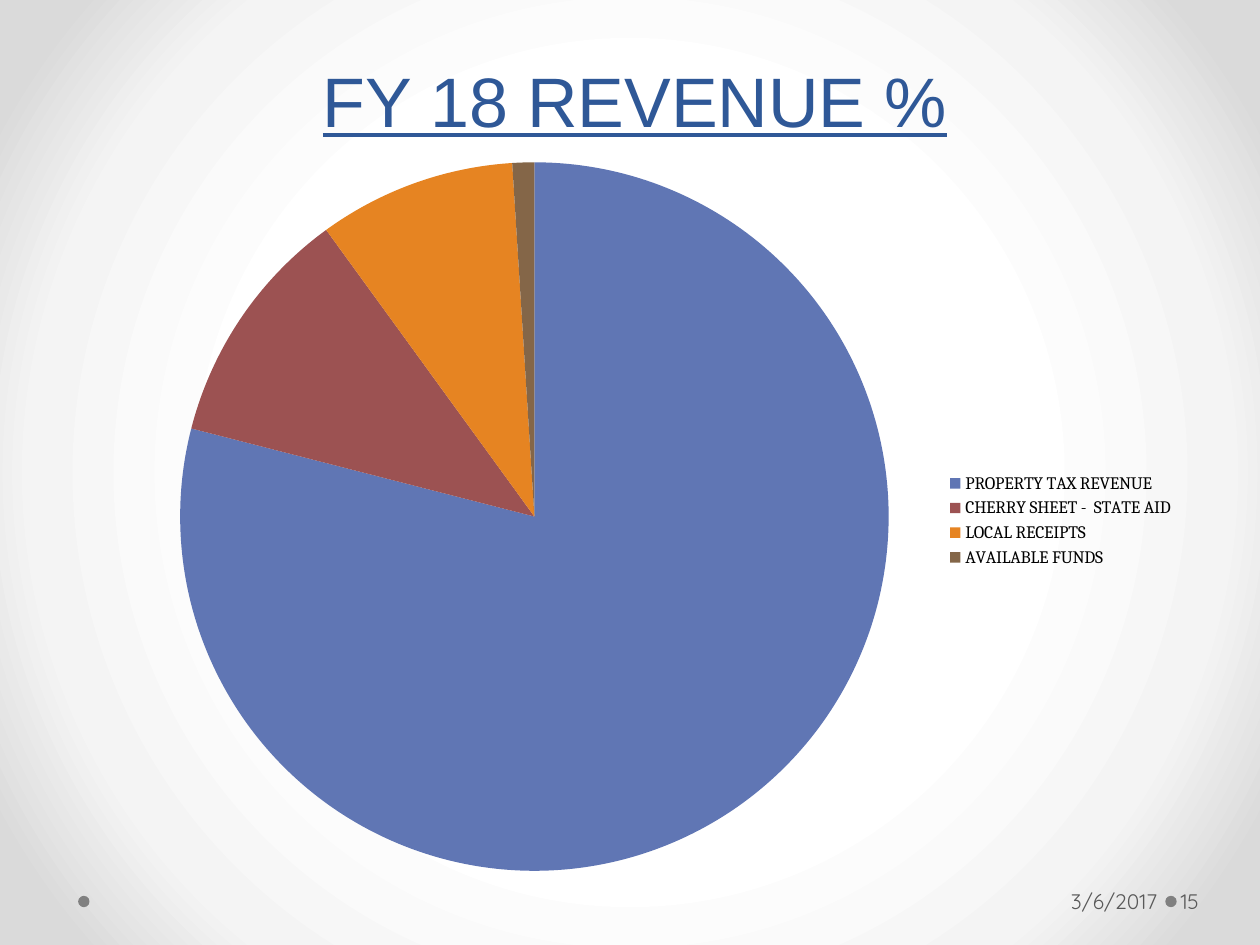
from lxml.etree import fromstring
from pptx import Presentation
from pptx.chart.data import CategoryChartData
from pptx.dml.color import RGBColor
from pptx.enum.chart import XL_CHART_TYPE as ChartType, XL_LEGEND_POSITION as LegendPosition
from pptx.enum.shapes import MSO_SHAPE as ShapeType
from pptx.enum.text import MSO_ANCHOR as Anchor, PP_ALIGN as Align
from pptx.util import Pt

COLORS = {
    "title": "2F5897", "footer": "595959", "dot": "808080", "legend": "000000",
    "center": "FFFFFF", "ring": "F4F4F4", "edge": "DADADA",
}
REVENUE = {
    "PROPERTY TAX REVENUE": (79, "6076B4"),
    "CHERRY SHEET -  STATE AID": (11, "9C5252"),
    "LOCAL RECEIPTS": (9, "E68422"),
    "AVAILABLE FUNDS": (1, "846648"),
}
TITLE_FONT = {"name": "Arial", "size": Pt(40), "underline": True}
FOOTER_FONT = {"name": "Quicksand", "size": Pt(12)}
LEGEND_FONT = {"name": "Cambria", "size": Pt(10)}
GRADIENT_STOPS = [(50, "center"), (76, "ring"), (92, "edge")]
DRAWING = "http://schemas.openxmlformats.org/drawingml/2006/main"
CHART = "http://schemas.openxmlformats.org/drawingml/2006/chart"


def rgb(name):
    """Return the named colour."""
    return RGBColor.from_string(COLORS[name])


def apply_format(target, values):
    """Set each attribute in values on target."""
    for attribute, value in values.items():
        setattr(target, attribute, value)


def paint_background(slide):
    """Fill the slide with a circular gradient that darkens outwards."""
    fill = slide.background.fill
    fill.solid()
    stops = "".join(
        f'<a:gs pos="{position * 1000}"><a:srgbClr val="{COLORS[name]}"/></a:gs>'
        for position, name in GRADIENT_STOPS
    )
    gradient = fromstring(
        f'<a:gradFill xmlns:a="{DRAWING}" rotWithShape="1"><a:gsLst>{stops}</a:gsLst>'
        '<a:path path="circle"><a:fillToRect l="50000" t="50000" r="50000" b="50000"/>'
        "</a:path></a:gradFill>"
    )
    solid = slide.background._cSld.find(f".//{{{DRAWING}}}solidFill")
    solid.getparent().replace(solid, gradient)


def add_text(slide, box, text, font, color, frame_format, paragraph_format):
    """Place one line of text in the given box."""
    frame = slide.shapes.add_textbox(*map(Pt, box)).text_frame
    apply_format(frame, {"word_wrap": True, **frame_format})
    paragraph = frame.paragraphs[0]
    apply_format(paragraph, paragraph_format)
    run = paragraph.add_run()
    run.text = text
    apply_format(run.font, font)
    run.font.color.rgb = rgb(color)


def add_title(slide, box):
    """Place the underlined title at the bottom of its box."""
    add_text(slide, box, "FY 18 REVENUE %", TITLE_FONT, "title",
             {"vertical_anchor": Anchor.BOTTOM},
             {"alignment": Align.CENTER, "line_spacing": Pt(58)})


def add_dot(slide, left, top):
    """Draw a small footer dot."""
    dot = slide.shapes.add_shape(ShapeType.OVAL, Pt(left), Pt(top), Pt(6.5), Pt(6.5))
    dot.shadow.inherit = False
    dot.fill.solid()
    dot.fill.fore_color.rgb = rgb("dot")
    dot.line.fill.background()


def add_footer(slide, box):
    """Place the dots, the date and the slide number along the footer."""
    left, top, width, height = box
    number_width, date_width = 44, 164
    number_left = left + width - number_width
    for dot_left in (left, number_left - 6.5):
        add_dot(slide, dot_left, top + 11.5)
    parts = [
        ("3/6/2017", number_left - 7.5 - date_width, date_width, 7.2, Align.RIGHT),
        ("15", number_left, number_width, 2.2, Align.LEFT),
    ]
    for text, part_left, part_width, inset, alignment in parts:
        add_text(slide, (part_left, top, part_width, height), text, FOOTER_FONT, "footer",
                 {"vertical_anchor": Anchor.MIDDLE, "margin_left": Pt(inset),
                  "margin_right": Pt(3.6)},
                 {"alignment": alignment})


def add_revenue_chart(slide, box):
    """Draw the revenue pie with its legend on the right."""
    data = CategoryChartData()
    data.categories = list(REVENUE)
    data.add_series("Series 1", [value for value, _ in REVENUE.values()])
    chart = slide.shapes.add_chart(ChartType.PIE, *map(Pt, box), data).chart
    apply_format(chart, {"has_title": False, "has_legend": True})
    apply_format(chart.legend, {"position": LegendPosition.RIGHT, "include_in_layout": False})
    for font in (chart.font, chart.legend.font):
        apply_format(font, LEGEND_FONT)
        font.color.rgb = rgb("legend")
    plot = chart.plots[0]
    plot.vary_by_categories = True
    for index, (_, color) in enumerate(REVENUE.values()):
        point = plot.series[0].points[index]
        point.format.fill.solid()
        point.format.fill.fore_color.rgb = RGBColor.from_string(color)
        point.format.line.fill.background()
    place_plot(chart, {"x": 0.05, "y": 0.02, "w": 0.67, "h": 0.95})


def place_plot(chart, fractions):
    """Fix the plot area at fractions of the chart's size."""
    values = "".join(f'<c:{name} val="{value}"/>' for name, value in fractions.items())
    layout = fromstring(
        f'<c:layout xmlns:c="{CHART}"><c:manualLayout><c:layoutTarget val="inner"/>'
        f'<c:xMode val="edge"/><c:yMode val="edge"/>{values}</c:manualLayout></c:layout>'
    )
    plot_area = chart._chartSpace.chart.plotArea
    for existing in plot_area.findall(f"{{{CHART}}}layout"):
        plot_area.remove(existing)
    plot_area.insert(0, layout)


def main():
    """Build and save the revenue slide."""
    presentation = Presentation()
    apply_format(presentation, {"slide_width": Pt(720), "slide_height": Pt(540)})
    slide = presentation.slides.add_slide(presentation.slide_layouts[6])
    paint_background(slide)
    add_title(slide, (0, 0, 725.76, 84.24))
    add_footer(slide, (44.64, 500.4, 671.76, 28.8))
    add_revenue_chart(slide, (72, 84.24, 606.24, 426.24))
    presentation.save("out.pptx")


if __name__ == "__main__":
    main()
